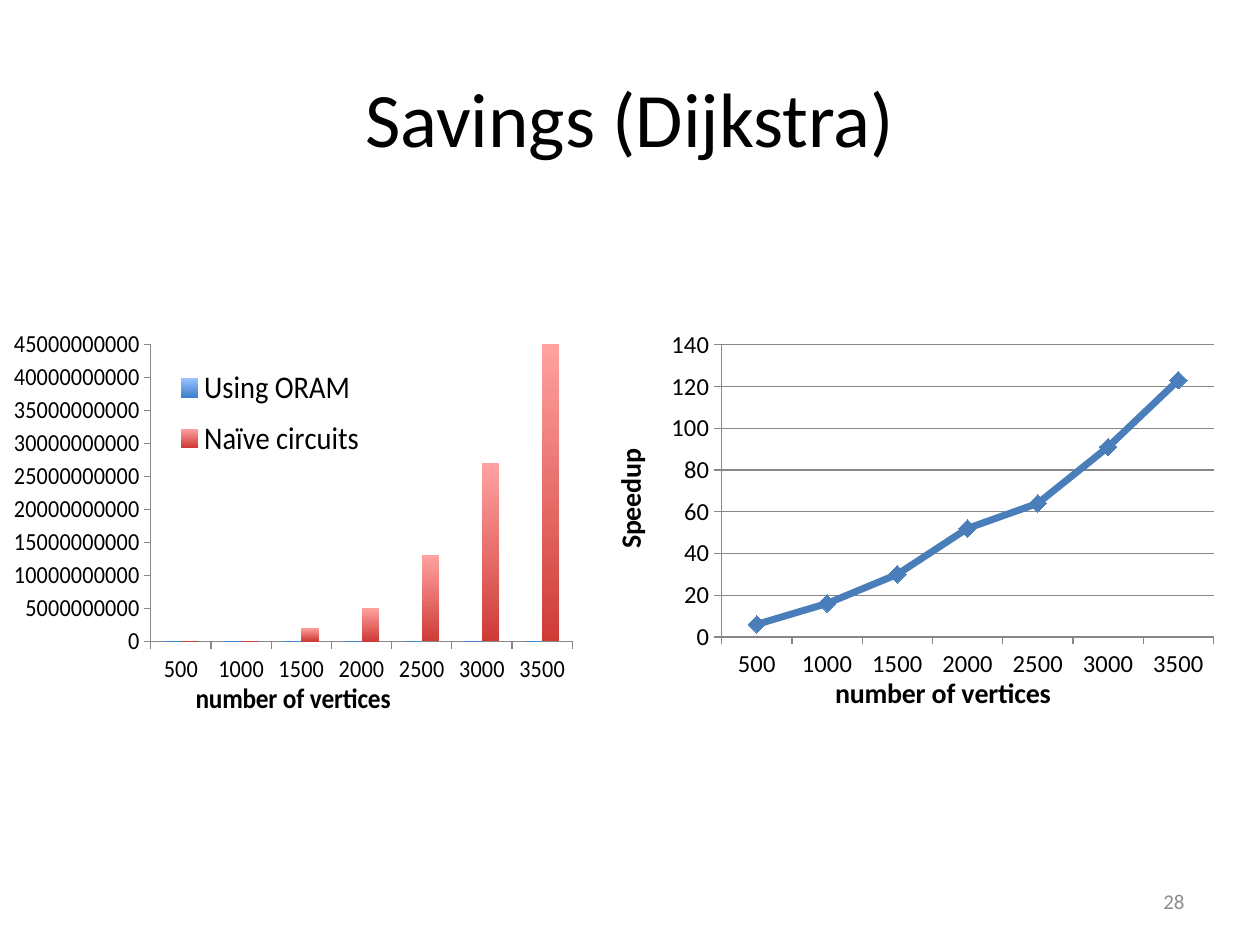
from lxml import etree
from pptx import Presentation
from pptx.chart.data import CategoryChartData
from pptx.dml.color import RGBColor
from pptx.enum.chart import XL_CHART_TYPE, XL_LEGEND_POSITION, XL_MARKER_STYLE, XL_TICK_MARK
from pptx.enum.text import MSO_ANCHOR, PP_ALIGN
from pptx.oxml.ns import qn
from pptx.util import Inches, Pt

COLUMNS, LINE = XL_CHART_TYPE.COLUMN_CLUSTERED, XL_CHART_TYPE.LINE_MARKERS
LEGEND_RIGHT = XL_LEGEND_POSITION.RIGHT
DIAMOND = XL_MARKER_STYLE.DIAMOND
TICK_OUT, TICK_NONE = XL_TICK_MARK.OUTSIDE, XL_TICK_MARK.NONE
MIDDLE = MSO_ANCHOR.MIDDLE
CENTER, RIGHT = PP_ALIGN.CENTER, PP_ALIGN.RIGHT

FONT = "Calibri"
COLORS = {
    "text": "000000", "number": "8C8C8C", "axis": "878787", "line": "4A7EBB",
    "blue top": "9BC1FF", "blue bottom": "3F80CD",
    "red top": "FFA2A0", "red bottom": "CE3B37",
}
VERTICES = ["500", "1000", "1500", "2000", "2500", "3000", "3500"]
BILLION = 10**9
CIRCUIT_SIZES = {
    "Using ORAM": [0, 0, 0, 0, 0, 0, 0],
    "Naïve circuits": [0, 0, 2, 5, 13, 27, 50],
}
SPEEDUPS = [6, 16, 30, 52, 64, 91, 123]


def color(name):
    return RGBColor.from_string(COLORS[name])


def style_font(font, size, name="text", bold=False):
    font.name, font.size, font.bold = FONT, Pt(size), bold
    font.color.rgb = color(name)


def write(shape, text, size, name, alignment):
    frame = shape.text_frame
    frame.text = text
    frame.word_wrap = True
    frame.vertical_anchor = MIDDLE
    paragraph = frame.paragraphs[0]
    paragraph.alignment = alignment
    style_font(paragraph.runs[0].font, size, name)


def place(parent, index, **shares):
    """Give a chart part a manual layout in shares of the chart's size."""
    for old in parent.findall(qn("c:layout")):
        parent.remove(old)
    layout = etree.Element(qn("c:layout"))
    manual = etree.SubElement(layout, qn("c:manualLayout"))
    settings = {"xMode": "edge", "yMode": "edge", **shares}
    if parent.tag == qn("c:plotArea"):
        settings = {"layoutTarget": "inner", **settings}
    for key, value in settings.items():
        etree.SubElement(manual, qn("c:" + key)).set("val", str(value))
    parent.insert(index, layout)


def add_axis_title(axis, text, x, y, rotation=0):
    frame = axis.axis_title.text_frame
    frame.text = text
    frame._txBody.bodyPr.set("rot", str(rotation * 60000))
    style_font(frame.paragraphs[0].runs[0].font, 16, bold=True)
    place(axis.axis_title._element, 1, x=x, y=y)


def add_chart(slide, kind, box, series, plot_area, maximum, step):
    data = CategoryChartData(number_format="0")
    data.categories = VERTICES
    for name, values in series.items():
        data.add_series(name, values)
    chart = slide.shapes.add_chart(kind, *map(Inches, box), data).chart
    chart.has_title = chart.has_legend = False
    style_font(chart.font, 14)
    chart.plots[0].vary_by_categories = False
    for axis in (chart.category_axis, chart.value_axis):
        axis.major_tick_mark, axis.minor_tick_mark = TICK_OUT, TICK_NONE
        axis.has_major_gridlines = False
        axis.format.line.color.rgb = color("axis")
        style_font(axis.tick_labels.font, 14)
    chart.value_axis.minimum_scale = 0
    chart.value_axis.maximum_scale = maximum
    chart.value_axis.major_unit = step
    place(chart._chartSpace.chart.plotArea, 0, **plot_area)
    return chart


def add_size_chart(slide):
    series = {name: [value * BILLION for value in values]
              for name, values in CIRCUIT_SIZES.items()}
    chart = add_chart(slide, COLUMNS, (0.11, 2.54, 4.63, 3.21), series,
                      dict(x=0.154, y=0.06, w=0.799, h=0.735), 45 * BILLION, 5 * BILLION)
    add_axis_title(chart.category_axis, "number of vertices", 0.23, 0.875)
    plot = chart.plots[0]
    plot.gap_width, plot.overlap = 150, 0
    for bars, hue in zip(plot.series, ("blue", "red")):
        fill = bars.format.fill
        fill.gradient()
        fill.gradient_angle = 270
        for stop, end in zip(fill.gradient_stops, ("top", "bottom")):
            stop.color.rgb = color(f"{hue} {end}")
    # Legend over the empty part of the plot
    chart.has_legend = True
    chart.legend.position = LEGEND_RIGHT
    chart.legend.include_in_layout = False
    style_font(chart.legend.font, 18)
    place(chart.legend._element, 1, x=0.18, y=0.09, w=0.4, h=0.28)


def add_speedup_chart(slide):
    chart = add_chart(slide, LINE, (4.76, 2.54, 5.15, 3.17), {"Series 1": SPEEDUPS},
                      dict(x=0.188, y=0.062, w=0.758, h=0.732), 140, 20)
    add_axis_title(chart.category_axis, "number of vertices", 0.355, 0.873)
    add_axis_title(chart.value_axis, "Speedup", 0.01, 0.31, rotation=-90)
    chart.value_axis.has_major_gridlines = True
    chart.value_axis.major_gridlines.format.line.color.rgb = color("axis")
    speedup = chart.plots[0].series[0]
    speedup.smooth = False
    speedup.format.line.width = Pt(4)
    speedup.format.line.color.rgb = color("line")
    marker = speedup.marker
    marker.style, marker.size = DIAMOND, 10
    marker.format.fill.solid()
    marker.format.fill.fore_color.rgb = color("line")
    marker.format.line.color.rgb = color("line")


def main():
    presentation = Presentation()
    presentation.slide_width, presentation.slide_height = Inches(10), Inches(7.5)
    slide = presentation.slides.add_slide(presentation.slide_layouts[5])

    # Title
    title = slide.shapes.title
    title.left, title.top, title.width, title.height = map(Inches, (0.5, 0.3, 9, 1.25))
    write(title, "Savings (Dijkstra)", 44, "text", CENTER)

    # Slide number
    number = slide.shapes.add_textbox(*map(Inches, (7.17, 6.95, 2.33, 0.4)))
    write(number, "28", 12, "number", RIGHT)

    # Charts
    add_size_chart(slide)
    add_speedup_chart(slide)
    presentation.save("out.pptx")


if __name__ == "__main__":
    main()
